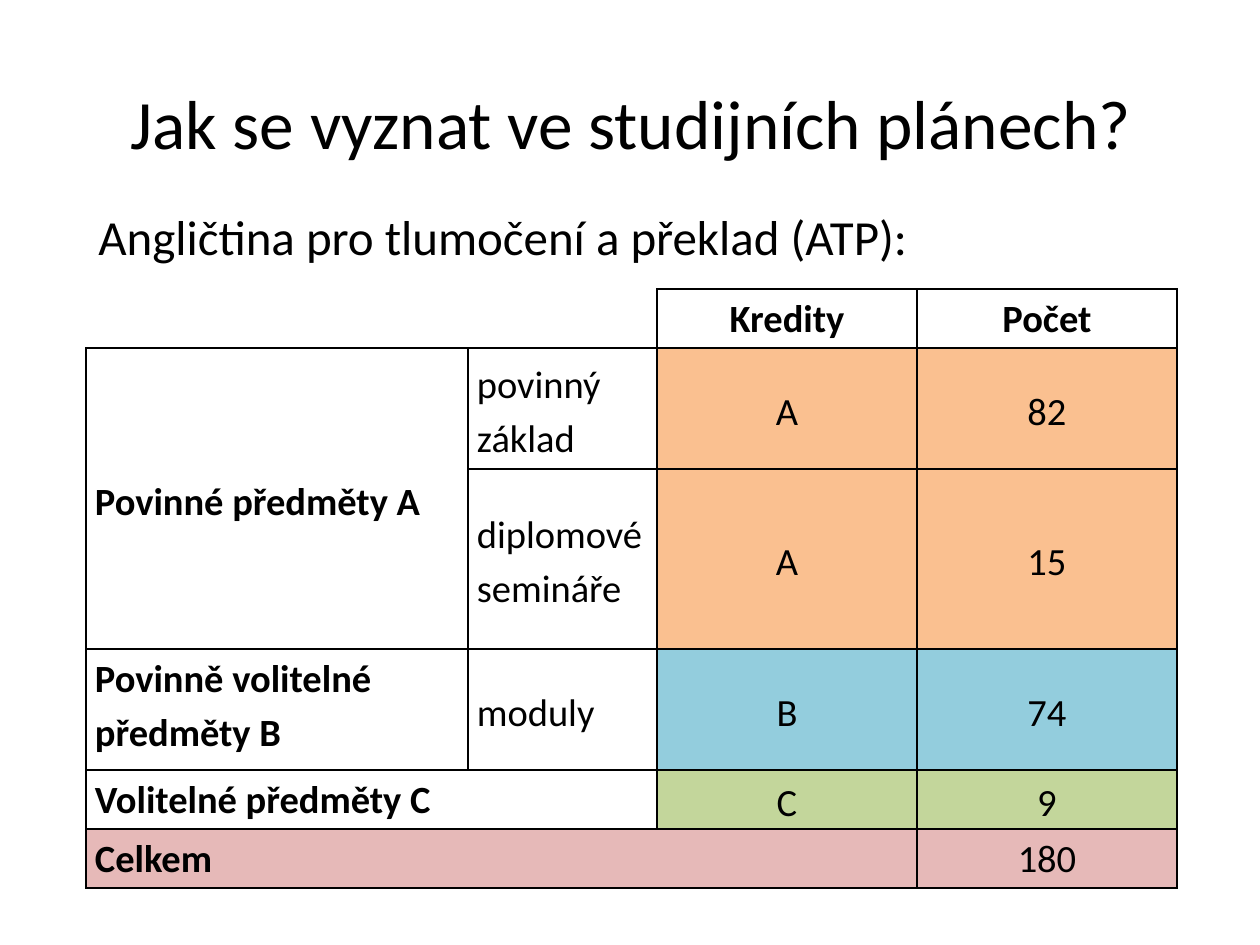
from pptx import Presentation
from pptx.dml.color import RGBColor
from pptx.enum.text import MSO_ANCHOR as Anchor, PP_ALIGN as Align
from pptx.oxml import parse_xml
from pptx.oxml.ns import nsdecls
from pptx.util import Emu, Pt

PX = 914400 / 126
FONT = "Calibri"
BLACK = RGBColor(0x00, 0x00, 0x00)
ORANGE = RGBColor(0xFA, 0xC0, 0x90)
BLUE = RGBColor(0x93, 0xCD, 0xDD)
GREEN = RGBColor(0xC3, 0xD6, 0x9B)
PINK = RGBColor(0xE6, 0xB9, 0xB8)

COLUMNS = [382, 189, 260, 260]
ROWS = [59, 121, 180, 121, 59, 59]
MERGES = [((1, 0), (2, 0)), ((4, 0), (4, 1)), ((5, 0), (5, 2))]
CONTENT = [
    ["", "", "Kredity", "Počet"],
    ["Povinné předměty A", "povinný základ", "A", "82"],
    ["", "diplomové semináře", "A", "15"],
    ["Povinně volitelné předměty B", "moduly", "B", "74"],
    ["Volitelné předměty C", "", "C", "9"],
    ["Celkem", "", "", "180"],
]
ROW_FILLS = [None, ORANGE, ORANGE, BLUE, GREEN, PINK]
TOP_ANCHORED = {(0, 2), (0, 3), (3, 0), (4, 0), (5, 0), (5, 3)}
CORNER_EDGES = {(0, 0): "B", (0, 1): "RB"}


def px(n):
    """Turn pixels into EMU."""
    return Emu(round(n * PX))


def write(tf, text, size=22, bold=False, align=Align.LEFT, spacing=None):
    """Write one formatted paragraph into a text frame."""
    p = tf.paragraphs[0]
    p.alignment = align
    if spacing:
        p.line_spacing = spacing
    r = p.add_run()
    r.text = text
    r.font.name = FONT
    r.font.size = Pt(size)
    r.font.bold = bold
    r.font.color.rgb = BLACK


def add_text(s, box, text, anchor=Anchor.TOP, wrap=True, **fmt):
    """Add a text box with one paragraph."""
    tf = s.shapes.add_textbox(*map(px, box)).text_frame
    tf.word_wrap = wrap
    tf.vertical_anchor = anchor
    write(tf, text, **fmt)


def set_borders(cell, edges):
    """Draw black lines on the named cell edges and none on the others."""
    tc_pr = cell._tc.get_or_add_tcPr()
    for i, edge in enumerate("LRTB"):
        paint = (f'<a:solidFill><a:srgbClr val="{BLACK}"/></a:solidFill>'
                 if edge in edges else "<a:noFill/>")
        tc_pr.insert(i, parse_xml(
            f'<a:ln{edge} {nsdecls("a")} w="{Pt(1)}">{paint}</a:ln{edge}>'))


def format_cell(cell, row, col, text):
    """Give a table cell its fill, borders, margins and text."""
    fill = ROW_FILLS[row]
    if fill and (col >= 2 or fill == PINK):
        cell.fill.solid()
        cell.fill.fore_color.rgb = fill
    else:
        cell.fill.background()
    set_borders(cell, CORNER_EDGES.get((row, col), "LRTB"))
    cell.margin_left = cell.margin_right = px(9)
    cell.margin_top = cell.margin_bottom = 0
    cell.vertical_anchor = Anchor.TOP if (row, col) in TOP_ANCHORED else Anchor.MIDDLE
    if text:
        write(cell.text_frame, text, bold=row == 0 or col == 0, spacing=1.15,
              align=Align.CENTER if col >= 2 else Align.LEFT)


def add_credit_table(s, left, top):
    """Add the table of credits by subject group."""
    box = map(px, (left, top, sum(COLUMNS), sum(ROWS)))
    table = s.shapes.add_table(len(ROWS), len(COLUMNS), *box).table
    table.first_row = table.horz_banding = False
    for column, width in zip(table.columns, COLUMNS):
        column.width = px(width)
    for row, height in zip(table.rows, ROWS):
        row.height = px(height)
    for i, texts in enumerate(CONTENT):
        for j, text in enumerate(texts):
            format_cell(table.cell(i, j), i, j, text)
    for first, last in MERGES:
        table.cell(*first).merge(table.cell(*last))


def main():
    """Build and save the slide."""
    prs = Presentation()
    prs.slide_width, prs.slide_height = px(1260), px(945)
    s = prs.slides.add_slide(prs.slide_layouts[6])
    add_text(s, (64, 43, 1134, 158), "Jak se vyznat ve studijních plánech?",
             anchor=Anchor.MIDDLE, size=39.6, align=Align.CENTER)
    add_credit_table(s, 86, 289)
    add_text(s, (86, 200, 862, 72), "Angličtina pro tlumočení a překlad (ATP):",
             wrap=False, size=28)
    prs.save("out.pptx")


if __name__ == "__main__":
    main()
